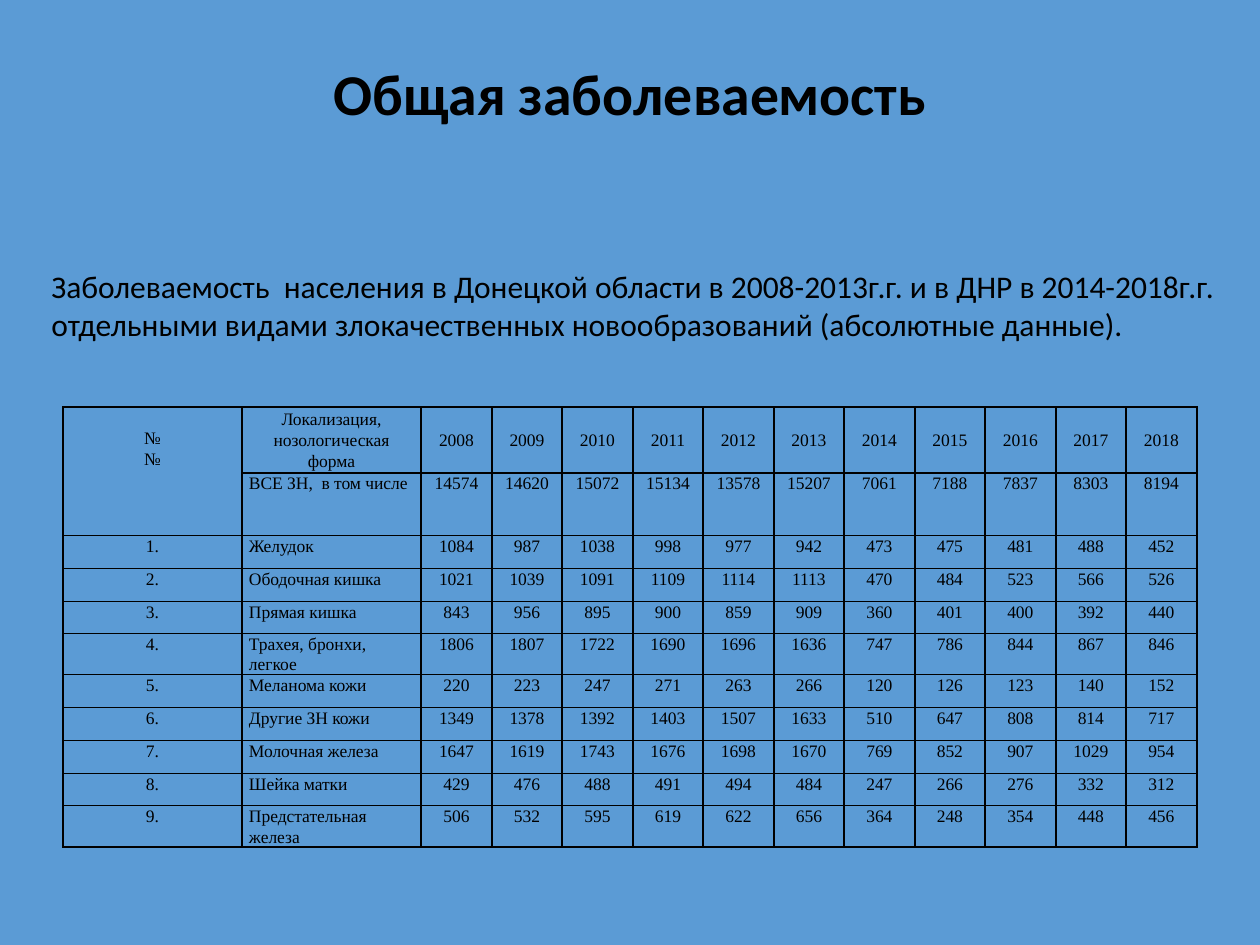
from dataclasses import dataclass
from typing import Any

import lxml.etree
import pptx
import pptx.dml.color
import pptx.enum.text
import pptx.oxml.ns
import pptx.util

PX = 914400 / 126
ALIGN = pptx.enum.text.PP_ALIGN
ANCHOR = pptx.enum.text.MSO_ANCHOR


@dataclass(frozen=True)
class Theme:
    background: str = "5B9BD5"
    ink: str = "000000"
    heading_font: str = "Calibri"
    table_font: str = "Times New Roman"
    title_size: int = 33
    caption_size: int = 18
    table_size: int = 10
    border_pt: int = 1


@dataclass(frozen=True)
class Box:
    left: int
    top: int
    width: int
    height: int

    def emu(self) -> list[int]:
        return [px(v) for v in (self.left, self.top, self.width, self.height)]


@dataclass(frozen=True)
class Disease:
    name: str
    counts: tuple[int, ...]


THEME = Theme()
TITLE_BOX = Box(63, 38, 1134, 117)
CAPTION_BOX = Box(39, 265, 1216, 79)
TABLE_BOX = Box(63, 407, 1134, 393)
LABEL_WIDTH = 179
CELL_INSET = 7
LINE_HEIGHT = 21

YEARS = range(2008, 2019)
CAPTION = (
    "Заболеваемость  населения в Донецкой области в 2008-2013г.г. и в ДНР в 2014-2018г.г.",
    "отдельными видами злокачественных новообразований (абсолютные данные).",
)
TOTAL = Disease("ВСЕ ЗН,  в том числе",
                (14574, 14620, 15072, 15134, 13578, 15207, 7061, 7188, 7837, 8303, 8194))
DISEASES = (
    Disease("Желудок", (1084, 987, 1038, 998, 977, 942, 473, 475, 481, 488, 452)),
    Disease("Ободочная кишка", (1021, 1039, 1091, 1109, 1114, 1113, 470, 484, 523, 566, 526)),
    Disease("Прямая кишка", (843, 956, 895, 900, 859, 909, 360, 401, 400, 392, 440)),
    Disease("Трахея, бронхи, легкое",
            (1806, 1807, 1722, 1690, 1696, 1636, 747, 786, 844, 867, 846)),
    Disease("Меланома кожи", (220, 223, 247, 271, 263, 266, 120, 126, 123, 140, 152)),
    Disease("Другие ЗН кожи", (1349, 1378, 1392, 1403, 1507, 1633, 510, 647, 808, 814, 717)),
    Disease("Молочная железа",
            (1647, 1619, 1743, 1676, 1698, 1670, 769, 852, 907, 1029, 954)),
    Disease("Шейка матки", (429, 476, 488, 491, 494, 484, 247, 266, 276, 332, 312)),
    Disease("Предстательная железа", (506, 532, 595, 619, 622, 656, 364, 248, 354, 448, 456)),
)


def px(length: int) -> int:
    return round(length * PX)


def split(total: int, parts: int) -> list[int]:
    edges = [round(total * i / parts) for i in range(parts + 1)]
    return [end - start for start, end in zip(edges, edges[1:])]


def write(frame: Any, lines: tuple[str, ...], font: str, size: int, align: Any,
          bold: bool = False, spacing: float = 1.0) -> None:
    for index, line in enumerate(lines):
        paragraph = frame.add_paragraph() if index else frame.paragraphs[0]
        paragraph.alignment = align
        paragraph.line_spacing = spacing
        run = paragraph.add_run()
        run.text = line
        run.font.name = font
        run.font.size = pptx.util.Pt(size)
        run.font.bold = bold
        run.font.color.rgb = pptx.dml.color.RGBColor.from_string(THEME.ink)


def draw_borders(cell: Any) -> None:
    qn = pptx.oxml.ns.qn
    properties = cell._tc.get_or_add_tcPr()
    for index, side in enumerate(("a:lnL", "a:lnR", "a:lnT", "a:lnB")):
        line = lxml.etree.Element(qn(side), w=str(pptx.util.Pt(THEME.border_pt)))
        fill = lxml.etree.SubElement(line, qn("a:solidFill"))
        lxml.etree.SubElement(fill, qn("a:srgbClr"), val=THEME.ink)
        properties.insert(index, line)


def draw_title(slide: Any) -> None:
    title = slide.shapes.title
    title.left, title.top, title.width, title.height = TITLE_BOX.emu()
    title.text_frame.auto_size = pptx.enum.text.MSO_AUTO_SIZE.NONE
    title.text_frame.vertical_anchor = ANCHOR.MIDDLE
    write(title.text_frame, ("Общая заболеваемость",), THEME.heading_font,
          THEME.title_size, ALIGN.CENTER, bold=True, spacing=0.9)


def draw_caption(slide: Any) -> None:
    frame = slide.shapes.add_textbox(*CAPTION_BOX.emu()).text_frame
    frame.word_wrap = True
    frame.vertical_anchor = ANCHOR.MIDDLE
    write(frame, CAPTION, THEME.heading_font, THEME.caption_size, ALIGN.LEFT)


def draw_table(slide: Any) -> None:
    rows = [("№\n№", "Локализация, нозологическая форма", *YEARS),
            ("", TOTAL.name, *TOTAL.counts)]
    rows += [(f"{number}.", disease.name, *disease.counts)
             for number, disease in enumerate(DISEASES, 1)]
    table = slide.shapes.add_table(len(rows), len(rows[0]), *TABLE_BOX.emu()).table
    table.first_row = table.horz_banding = False

    widths = [LABEL_WIDTH] * 2 + split(TABLE_BOX.width - 2 * LABEL_WIDTH, len(YEARS))
    for column, width in zip(table.columns, widths):
        column.width = px(width)
    units = split(TABLE_BOX.height, len(rows) + 1)
    for row, height in zip(table.rows, [units[0] + units[1], *units[2:]]):
        row.height = px(height)

    for r, values in enumerate(rows):
        for c, value in enumerate(values):
            cell = table.cell(r, c)
            cell.fill.background()
            draw_borders(cell)
            cell.margin_left = cell.margin_right = px(CELL_INSET)
            cell.margin_top = cell.margin_bottom = 0
            cell.vertical_anchor = ANCHOR.MIDDLE if r == 0 and c else ANCHOR.TOP
            if value != "":
                write(cell.text_frame, tuple(str(value).split("\n")), THEME.table_font,
                      THEME.table_size, ALIGN.LEFT if r and c == 1 else ALIGN.CENTER,
                      spacing=1.07)

    number_header = table.cell(0, 0)
    number_header.merge(table.cell(1, 0))
    number_header.margin_top = px(LINE_HEIGHT)


def main() -> None:
    deck = pptx.Presentation()
    deck.slide_width, deck.slide_height = px(1260), px(945)
    slide = deck.slides.add_slide(deck.slide_layouts[5])
    backdrop = slide.background.fill
    backdrop.solid()
    backdrop.fore_color.rgb = pptx.dml.color.RGBColor.from_string(THEME.background)
    draw_title(slide)
    draw_table(slide)
    draw_caption(slide)
    deck.save("out.pptx")


if __name__ == "__main__":
    main()
